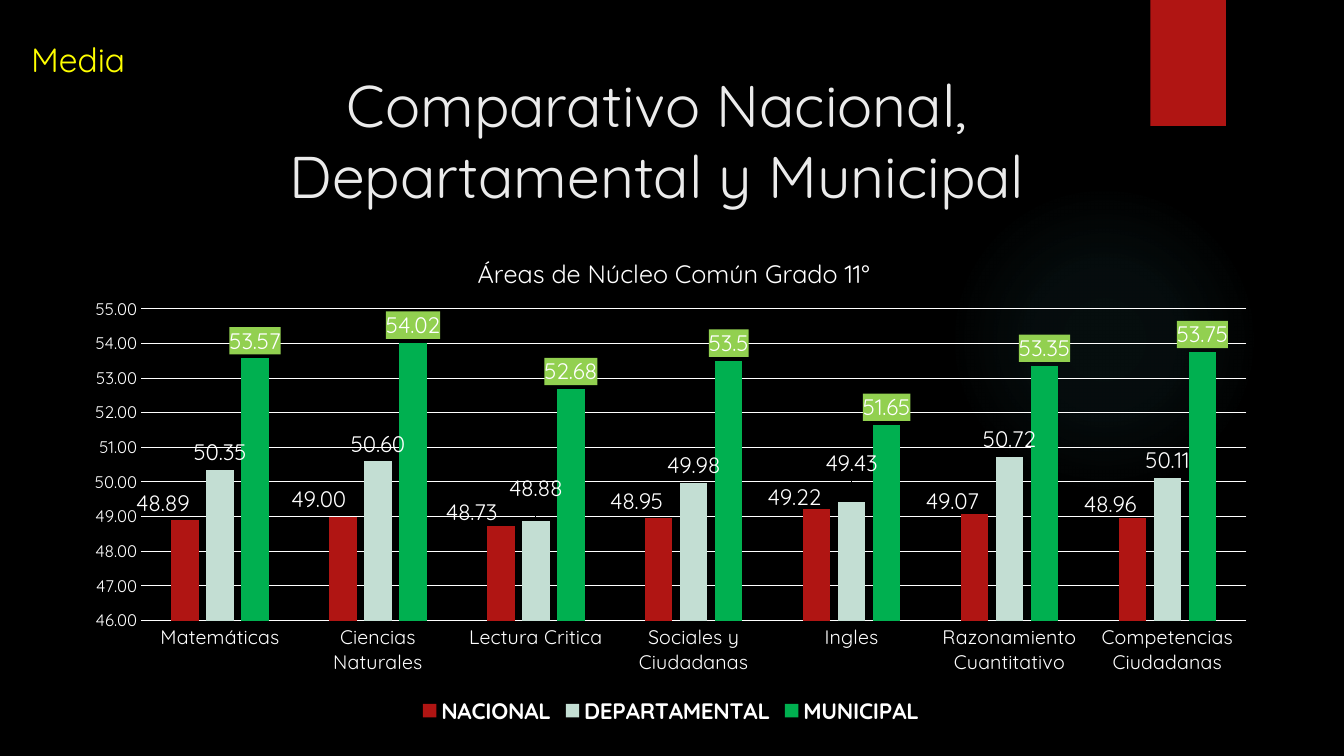
from lxml.etree import SubElement as Sub
from pptx import Presentation
from pptx.chart.data import CategoryChartData as Data
from pptx.dml.color import RGBColor as Color
from pptx.enum.chart import XL_CHART_TYPE as Kind
from pptx.enum.chart import XL_LABEL_POSITION as Spot
from pptx.enum.chart import XL_LEGEND_POSITION as Side
from pptx.enum.chart import XL_TICK_MARK as Tick
from pptx.enum.shapes import MSO_SHAPE as Shape
from pptx.enum.text import MSO_ANCHOR as Anchor
from pptx.enum.text import PP_ALIGN as Align
from pptx.oxml import parse_xml
from pptx.oxml.ns import qn
from pptx.util import Inches, Pt

FACE = "Quicksand"
WHITE = "FFFFFF"
RED = "B01513"
LIME = "92D050"
NS = "http://schemas.openxmlformats.org/drawingml/2006/main"
AREAS = ["Matemáticas", "Ciencias Naturales", "Lectura Critica",
         "Sociales y Ciudadanas", "Ingles", "Razonamiento Cuantitativo",
         "Competencias Ciudadanas"]
SCORES = {
    "NACIONAL": (RED, "0.00", [48.89, 49, 48.73, 48.95, 49.22, 49.07, 48.96]),
    "DEPARTAMENTAL": ("C3DED3", "0.00",
                      [50.35, 50.6, 48.88, 49.98, 49.43, 50.72, 50.11]),
    "MUNICIPAL": ("00B050", "General",
                  [53.57, 54.02, 52.68, 53.5, 51.65, 53.35, 53.75]),
}
SHIFTS = {
    "NACIONAL": {0: (-0.22, 0), 1: (-0.24, 0), 2: (-0.29, 0.04), 3: (-0.22, 0),
                 4: (-0.22, 0.06), 5: (-0.22, 0.05), 6: (-0.22, 0.04)},
    "DEPARTAMENTAL": {2: (0, -0.15), 4: (0, -0.21)},
}


def tint(code):
    return Color.from_string(code)


def style(font, size, code=WHITE, bold=False):
    font.name = FACE
    font.size = Pt(size)
    font.bold = bold
    font.color.rgb = tint(code)


def paint(fill, code):
    fill.solid()
    fill.fore_color.rgb = tint(code)


def rule(line):
    line.color.rgb = tint(WHITE)
    line.width = Pt(0.75)


def layout(**parts):
    node = parse_xml(
        '<c:layout xmlns:c="http://schemas.openxmlformats.org/'
        'drawingml/2006/chart"><c:manualLayout/></c:layout>')
    for key, val in parts.items():
        Sub(node[0], qn("c:" + key)).set("val", str(val))
    return node


def put_layout(owner, node):
    for old in owner.findall(qn("c:layout")):
        owner.remove(old)
    return node


def add_plain(slide, kind, box):
    shape = slide.shapes.add_shape(kind, *map(Inches, box))
    shape.shadow.inherit = False
    shape.line.fill.background()
    return shape


def add_decor(slide, glow, flag):
    shape = add_plain(slide, Shape.OVAL, glow)
    stops = "".join(
        f'<a:gs pos="{pos}000"><a:srgbClr val="50B9C1">'
        f'<a:alpha val="{alpha}000"/></a:srgbClr></a:gs>'
        for pos, alpha in ((0, 7), (36, 6), (69, 0), (100, 0)))
    shape.fill.background()
    props = shape._element.spPr
    props.replace(props.find(qn("a:noFill")), parse_xml(
        f'<a:gradFill xmlns:a="{NS}"><a:gsLst>{stops}</a:gsLst>'
        '<a:path path="circle"><a:fillToRect l="50000" t="50000" '
        'r="50000" b="50000"/></a:path></a:gradFill>'))
    paint(add_plain(slide, Shape.RECTANGLE, flag).fill, RED)


def add_text(slide, box, text, size, code, align, anchor):
    frame = slide.shapes.add_textbox(*map(Inches, box)).text_frame
    frame.word_wrap = True
    frame.vertical_anchor = anchor
    para = frame.paragraphs[0]
    para.text = text
    para.alignment = align
    style(para.font, size, code)


def add_labels(series, form, shifts, wide, high):
    labels = series.data_labels
    labels.show_value = True
    labels.position = Spot.OUTSIDE_END
    labels.number_format = form
    labels.number_format_is_linked = False
    style(labels.font, 16)
    for num, (right, down) in shifts.items():
        label = series.points[num].data_label
        style(label.font, 16)
        label.position = Spot.OUTSIDE_END
        node = label._dLbl
        node.insert(1, layout(x=round(right / wide, 4),
                              y=round(down / high, 4)))
        mark = node.makeelement(qn("c:numFmt"),
                                {"formatCode": form, "sourceLinked": "0"})
        node.find(qn("c:txPr")).getparent().insert(2, mark)
    return labels._element


def add_scores(slide, box):
    data = Data()
    data.categories = AREAS
    for name, (code, form, vals) in SCORES.items():
        data.add_series(name, vals, form)
    chart = slide.shapes.add_chart(
        Kind.COLUMN_CLUSTERED, *map(Inches, box), data).chart
    style(chart.font, 10)

    title = chart.chart_title
    para = title.text_frame.paragraphs[0]
    para.text = "Áreas de Núcleo Común Grado 11°"
    style(para.font, 18)
    node = title._element
    spot = put_layout(node, layout(xMode="edge", yMode="edge", x=0.335, y=0.05))
    node.find(qn("c:tx")).addnext(spot)
    title.include_in_layout = False

    area = chart._chartSpace.chart.plotArea
    area.insert(0, put_layout(area, layout(
        layoutTarget="inner", xMode="edge", yMode="edge",
        x=0.058, y=0.165, w=0.922, h=0.62)))

    chart.has_legend = True
    chart.legend.position = Side.BOTTOM
    chart.legend.include_in_layout = False
    style(chart.legend.font, 16, bold=True)

    for axis, size in ((chart.category_axis, 14), (chart.value_axis, 12)):
        axis.major_tick_mark = axis.minor_tick_mark = Tick.NONE
        style(axis.tick_labels.font, size)
    rule(chart.category_axis.format.line)
    axis = chart.value_axis
    axis.minimum_scale, axis.maximum_scale, axis.major_unit = 46, 55, 1
    axis.format.line.fill.background()
    rule(axis.major_gridlines.format.line)
    axis.tick_labels.number_format = "0.00"
    axis.tick_labels.number_format_is_linked = False

    plot = chart.plots[0]
    plot.vary_by_categories = False
    plot.gap_width, plot.overlap = 219, -27
    for series in plot.series:
        code, form, vals = SCORES[series.name]
        paint(series.format.fill, code)
        labels = add_labels(series, form, SHIFTS.get(series.name, {}), *box[2:])
    labels.find(qn("c:txPr")).addprevious(parse_xml(
        '<c:spPr xmlns:c="http://schemas.openxmlformats.org/drawingml/2006/'
        f'chart" xmlns:a="{NS}"><a:solidFill><a:srgbClr val="{LIME}"/>'
        '</a:solidFill></c:spPr>'))


def main():
    deck = Presentation()
    deck.slide_width, deck.slide_height = Inches(13.33), Inches(7.5)
    slide = deck.slides.add_slide(deck.slide_layouts[6])
    paint(slide.background.fill, "000000")
    add_decor(slide, (9.41, 1.83, 3.08, 3.08), (11.41, 0, 0.75, 1.25))
    add_text(slide, (1.37, 0.62, 10.29, 1.53),
             "Comparativo Nacional, Departamental y Municipal",
             42, "EBEBEB", Align.CENTER, Anchor.MIDDLE)
    add_scores(slide, (0.71, 2.24, 11.89, 4.99))
    add_text(slide, (0.21, 0.34, 1.49, 0.5), "Media",
             24, "FFFF00", Align.LEFT, Anchor.TOP)
    deck.save("out.pptx")


if __name__ == "__main__":
    main()
